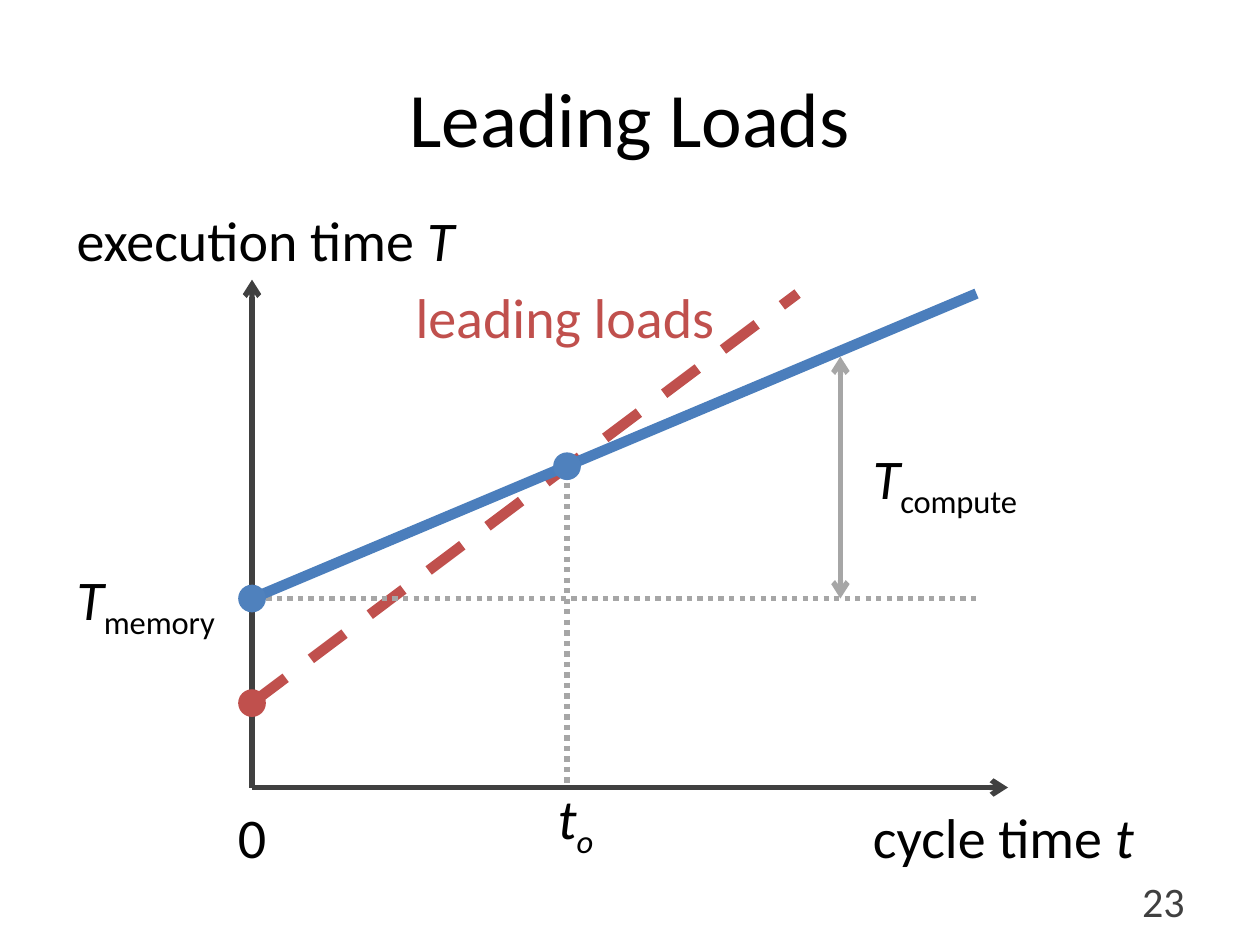
from lxml.etree import SubElement
from pptx import Presentation
from pptx.dml.color import RGBColor
from pptx.enum.dml import MSO_LINE
from pptx.enum.shapes import MSO_CONNECTOR, MSO_SHAPE
from pptx.enum.text import MSO_ANCHOR, PP_ALIGN
from pptx.oxml.ns import qn
from pptx.util import Inches, Pt

COLORS = {
    "black": "000000",
    "axis": "404040",
    "guide": "A6A6A6",
    "loads": "C0504D",
    "actual": "4B7EBC",
    "point": "4F81BD",
}
FONT = "Calibri"
TITLE = "Leading Loads"
PAGE_NUMBER = "23"

ORIGIN = (2, 6.25)
MEMORY = (2, 4.75)
LOADS_START = (2, 5.58)
CROSSING = (4.5, 3.7)
RIGHT, TOP = 7.75, 2.33
COMPUTE_X = 6.67
DOT_SIZE = 0.22

DASH, DOTS = MSO_LINE.DASH, MSO_LINE.ROUND_DOT
LINES = [
    (LOADS_START, (6.33, TOP), "loads", 6, DASH, ()),
    ((CROSSING[0], 3.75), (CROSSING[0], ORIGIN[1]), "guide", 3, DOTS, ()),
    ((2.03, MEMORY[1]), (RIGHT, MEMORY[1]), "guide", 3, DOTS, ()),
    (ORIGIN, (ORIGIN[0], 2.22), "axis", 3, None, ("tailEnd",)),
    (ORIGIN, (8, ORIGIN[1]), "axis", 3, None, ("tailEnd",)),
    (MEMORY, (RIGHT, TOP), "actual", 6, None, ()),
    ((COMPUTE_X, MEMORY[1]), (COMPUTE_X, 2.83), "guide", 3, None, ("headEnd", "tailEnd")),
]
DOT_MARKS = [(CROSSING, "point"), (MEMORY, "point"), (LOADS_START, "loads")]

PLAIN, ITALIC, SUB, ITALIC_SUB = (False, False), (True, False), (False, True), (True, True)
LABELS = [
    (0.51, 1.58, 3.31, "black", [("execution time ", PLAIN), ("T", ITALIC)]),
    (6.83, 6.32, 2.29, "black", [("cycle time ", PLAIN), ("t", ITALIC)]),
    (0.51, 4.43, 1.45, "black", [("T", ITALIC), ("memory", SUB)]),
    (6.83, 3.47, 1.5, "black", [("T", ITALIC), ("compute", SUB)]),
    (4.33, 6.17, 0.5, "black", [("t", ITALIC), ("o", ITALIC_SUB)]),
    (1.79, 6.32, 0.43, "black", [("0", PLAIN)]),
    (3.2, 2.19, 2.6, "loads", [("leading loads", PLAIN)]),
]


def rgb(name):
    return RGBColor.from_string(COLORS[name])


def add_span(para, text, size, color, style=PLAIN):
    italic, subscript = style
    span = para.add_run()
    span.text = text
    span.font.name = FONT
    span.font.size = Pt(size)
    span.font.italic = italic
    span.font.color.rgb = rgb(color)
    if subscript:
        span.font._element.set("baseline", "-25000")


def place(shape, left, top, width, height):
    shape.left, shape.top = Inches(left), Inches(top)
    shape.width, shape.height = Inches(width), Inches(height)


def add_line(page, start, end, color, width, dash, arrows):
    ends = [Inches(value) for value in (*start, *end)]
    line = page.shapes.add_connector(MSO_CONNECTOR.STRAIGHT, *ends)
    line.line.color.rgb = rgb(color)
    line.line.width = Pt(width)
    if dash is not None:
        line.line.dash_style = dash
    outline = line.line._get_or_add_ln()
    for arrow in arrows:
        SubElement(outline, qn(f"a:{arrow}"), type="arrow")
    SubElement(line._element.spPr, qn("a:effectLst"))


def add_dot(page, center, color):
    left, top = (value - DOT_SIZE / 2 for value in center)
    dot = page.shapes.add_shape(
        MSO_SHAPE.OVAL, Inches(left), Inches(top), Inches(DOT_SIZE), Inches(DOT_SIZE)
    )
    dot.shadow.inherit = False
    dot.fill.solid()
    dot.fill.fore_color.rgb = rgb(color)
    dot.line.fill.background()


def add_box(page, left, top, width, height):
    return page.shapes.add_textbox(Inches(left), Inches(top), Inches(width), Inches(height))


def main():
    deck = Presentation()
    deck.slide_width, deck.slide_height = Inches(10), Inches(7.5)
    page = deck.slides.add_slide(deck.slide_layouts[5])

    title = page.shapes.title
    place(title, 0.5, 0.3, 9, 1.25)
    title.text_frame.vertical_anchor = MSO_ANCHOR.MIDDLE
    para = title.text_frame.paragraphs[0]
    para.alignment = PP_ALIGN.CENTER
    add_span(para, TITLE, 44, "black")

    for line in LINES:
        add_line(page, *line)
    for center, color in DOT_MARKS:
        add_dot(page, center, color)

    for left, top, width, color, spans in LABELS:
        box = add_box(page, left, top, width, 0.64)
        box.text_frame.word_wrap = False
        for text, style in spans:
            add_span(box.text_frame.paragraphs[0], text, 32, color, style)

    number = add_box(page, 7.17, 6.95, 2.33, 0.4)
    number.text_frame.word_wrap = True
    number.text_frame.vertical_anchor = MSO_ANCHOR.MIDDLE
    para = number.text_frame.paragraphs[0]
    para.alignment = PP_ALIGN.RIGHT
    add_span(para, PAGE_NUMBER, 24, "axis")

    deck.save("out.pptx")


if __name__ == "__main__":
    main()
